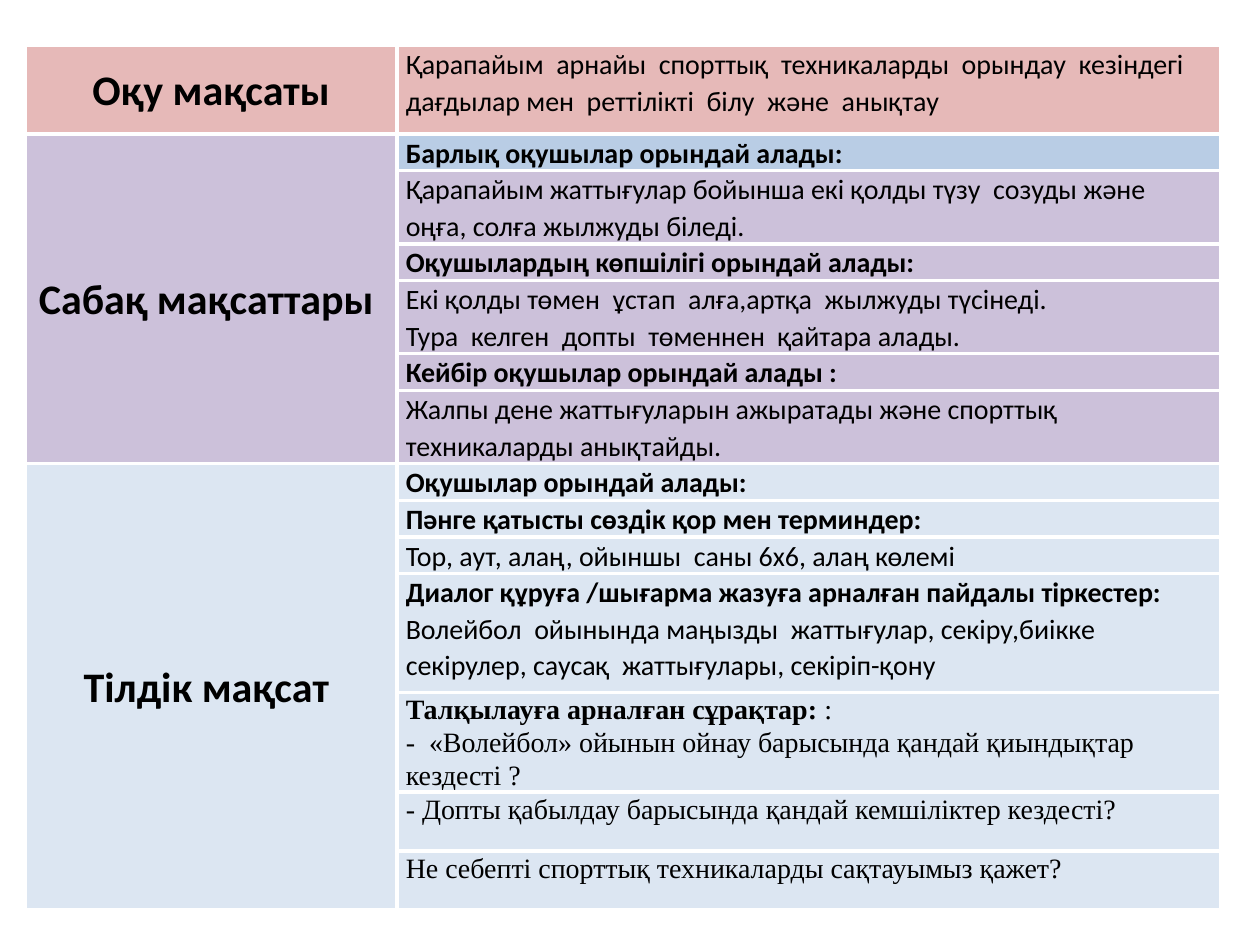
"""Build the slide with the table of lesson goals."""
import lxml.etree
import pptx
import pptx.dml.color
import pptx.enum.text
import pptx.oxml.ns
import pptx.util

Cm = pptx.util.Cm
Pt = pptx.util.Pt
qn = pptx.oxml.ns.qn
SANS, SERIF = "Calibri", "Times New Roman"
PINK, MAUVE, BLUE, PALE = "E6B9B8", "CCC1DA", "B9CDE5", "DCE6F2"


def color(code):
    return pptx.dml.color.RGBColor.from_string(code)


def write(cell, paras, size, face):
    frame = cell.text_frame
    frame.text = "\n".join(bold for bold, plain in paras)
    for para, (bold, plain) in zip(frame.paragraphs, paras):
        para.line_spacing = 1.07
        for run in para.runs:
            run.font.bold = True
        if plain:
            run = para.add_run()
            run.text = plain
            run.font.bold = False
        for run in para.runs:
            run.font.size = Pt(size)
            run.font.name = face
            run.font.color.rgb = color("000000")


# fmt: off
goals = [
    ("Оқу мақсаты", PINK, [
        (1.78, PINK, SANS, [("", "Қарапайым  арнайы  спорттық  техникаларды  орындау  кезіндегі дағдылар мен  реттілікті  білу  және  анықтау")]),
    ]),
    ("Сабақ мақсаттары ", MAUVE, [
        (0.69, BLUE, SANS, [("Барлық оқушылар орындай алады:", "")]),
        (1.19, MAUVE, SANS, [("", "Қарапайым жаттығулар бойынша екі қолды түзу  созуды және  оңға, солға жылжуды біледі.")]),
        (0.69, MAUVE, SANS, [("Оқушылардың көпшілігі орындай алады:", "")]),
        (1.4, MAUVE, SANS, [
            ("", "Екі қолды төмен  ұстап  алға,артқа  жылжуды түсінеді."),
            ("", "Тура  келген  допты  төменнен  қайтара алады."),
        ]),
        (0.69, MAUVE, SANS, [("Кейбір оқушылар орындай алады :", "")]),
        (1.37, MAUVE, SANS, [("", "Жалпы дене жаттығуларын ажыратады және спорттық техникаларды анықтайды.")]),
    ]),
    ("Тілдік мақсат ", PALE, [
        (0.69, PALE, SANS, [("Оқушылар орындай алады:", "")]),
        (0.69, PALE, SANS, [("Пәнге қатысты сөздік қор мен терминдер:", "")]),
        (0.69, PALE, SANS, [("", "Тор, аут, алаң, ойыншы  саны 6х6, алаң көлемі")]),
        (2.39, PALE, SANS, [(
            "Диалог құруға /шығарма жазуға арналған пайдалы тіркестер: ",
            "Волейбол  ойынында маңызды  жаттығулар, секіру,биікке секірулер, саусақ  жаттығулары, секіріп-қону",
        )]),
        (1.57, PALE, SERIF, [
            ("Талқылауға арналған сұрақтар: ", ":"),
            ("", "-  «Волейбол» ойынын ойнау барысында қандай қиындықтар кездесті ?"),
        ]),
        (1.19, PALE, SERIF, [("", "- Допты қабылдау барысында қандай кемшіліктер кездесті?")]),
        (1.19, PALE, SERIF, [("", "Не себепті спорттық техникаларды сақтауымыз қажет?")]),
    ]),
]
# fmt: on

deck = pptx.Presentation()
deck.slide_width, deck.slide_height = Cm(25.4), Cm(19.05)
slide = deck.slides.add_slide(deck.slide_layouts[6])
count = sum(len(items) for title, fill, items in goals)
grid = slide.shapes.add_table(count, 2, Cm(0.51), Cm(0.92), Cm(24.1), Cm(16.2)).table
grid.first_row = grid.horz_banding = False
grid.columns[0].width, grid.columns[1].width = Cm(7.49), Cm(16.61)

for cell in grid.iter_cells():
    cell.margin_left = cell.margin_right = Cm(0.18)
    cell.margin_top = cell.margin_bottom = 0
    props = cell._tc.get_or_add_tcPr()
    for side in ("a:lnL", "a:lnR", "a:lnT", "a:lnB"):
        line = lxml.etree.SubElement(props, qn(side), w=str(Pt(2.25)))
        paint = lxml.etree.SubElement(line, qn("a:solidFill"))
        lxml.etree.SubElement(paint, qn("a:srgbClr"), val="FFFFFF")

row = 0
for title, fill, items in goals:
    head = grid.cell(row, 0)
    if len(items) > 1:
        head.merge(grid.cell(row + len(items) - 1, 0))
    write(head, [(title, "")], 24, SANS)
    head.text_frame.paragraphs[0].alignment = pptx.enum.text.PP_ALIGN.CENTER
    head.vertical_anchor = pptx.enum.text.MSO_ANCHOR.MIDDLE
    for height, shade, face, paras in items:
        grid.rows[row].height = Cm(height)
        for col, tone in enumerate((fill, shade)):
            cell = grid.cell(row, col)
            cell.fill.solid()
            cell.fill.fore_color.rgb = color(tone)
        write(grid.cell(row, 1), paras, 16, face)
        row += 1

deck.save("out.pptx")
